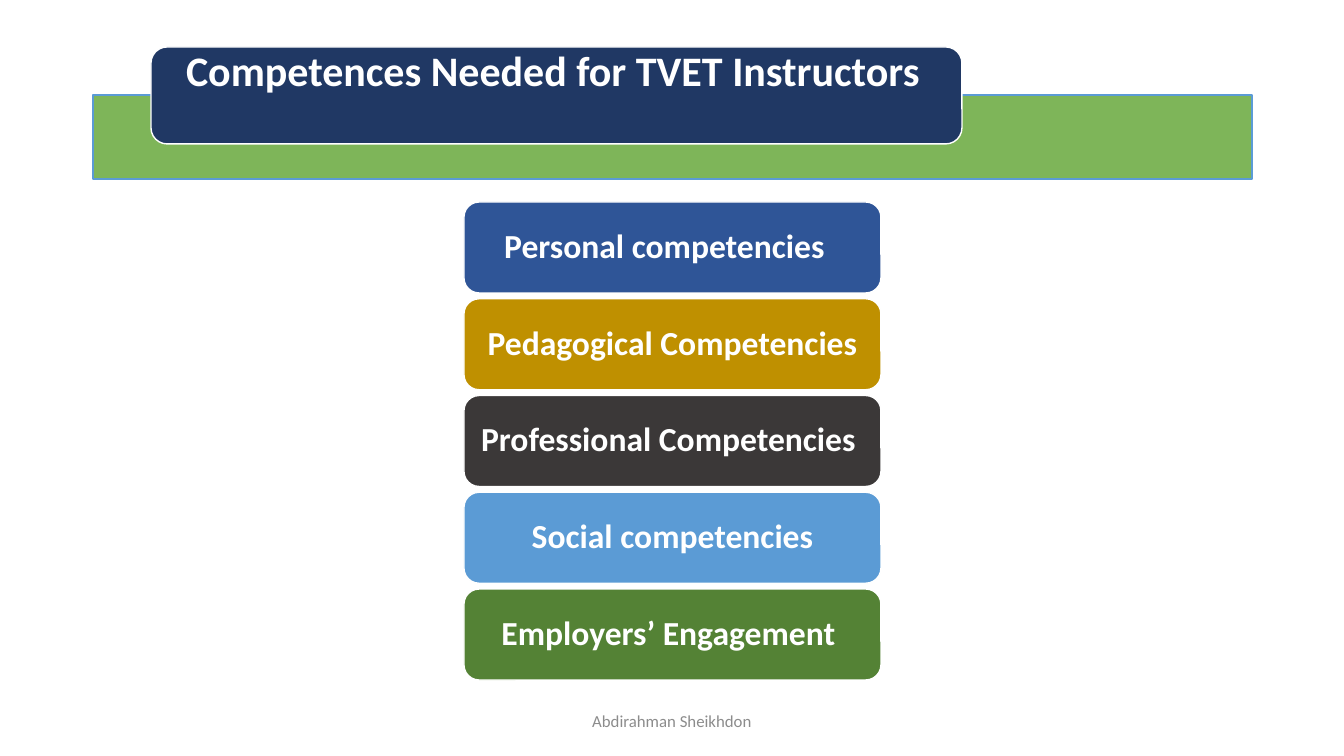
from lxml import etree
from pptx import Presentation
from pptx import util as u
from pptx.dml.color import RGBColor
from pptx.enum import shapes, text
from pptx.oxml import ns

SCALE = 914400 / 100.8  # EMU in one px
WHITE = RGBColor(0xFF, 0xFF, 0xFF)
GREEN = RGBColor(0x70, 0xAD, 0x47)
NAVY = RGBColor(0x20, 0x38, 0x64)
BLUE = RGBColor(0x2F, 0x55, 0x97)
GOLD = RGBColor(0xBF, 0x90, 0x00)
DARK = RGBColor(0x3B, 0x38, 0x38)
SKY = RGBColor(0x5B, 0x9B, 0xD5)
LEAF = RGBColor(0x54, 0x82, 0x35)
GREY = RGBColor(0x8C, 0x8C, 0x8C)

# Label, fill, px by which the label sits left of centre
BARS = [
    ("Personal competencies", BLUE, 8),
    ("Pedagogical Competencies", GOLD, 0),
    ("Professional Competencies", DARK, 4),
    ("Social competencies", SKY, 0),
    ("Employers’ Engagement", LEAF, 4),
]


def px(num):
    return u.Emu(round(num * SCALE))


def draw(slide, kind, box, fill, edge):
    item = slide.shapes.add_shape(kind, *map(px, box))
    item.shadow.inherit = False
    item.fill.solid()
    item.fill.fore_color.rgb = fill
    item.line.color.rgb = edge
    item.line.width = u.Pt(1)
    return item


def write(item, words, size, color, bold=True, align=text.PP_ALIGN.CENTER,
          anchor=text.MSO_ANCHOR.MIDDLE, left=0, right=0, lead=0.9):
    frame = item.text_frame
    frame.word_wrap = True
    frame.auto_size = text.MSO_AUTO_SIZE.NONE
    frame.vertical_anchor = anchor
    frame.margin_left, frame.margin_right = px(left), px(right)
    frame.margin_top = frame.margin_bottom = 0
    para = frame.paragraphs[0]
    para.alignment = align
    para.line_spacing = lead
    para.space_before = u.Pt(0)
    run = para.add_run()
    run.text = words
    font = run.font
    font.name, font.size, font.bold = "Calibri", u.Pt(size), bold
    font.color.rgb = color


def header(slide, x, y, w, h):
    # Translucent band
    band = draw(slide, shapes.MSO_SHAPE.RECTANGLE, (x, y + 48, w, h - 48), GREEN, SKY)
    tint = band.element.spPr.find(ns.qn("a:solidFill"))[0]
    etree.SubElement(tint, ns.qn("a:alpha"), val="90000")
    # Title plate
    draw(slide, shapes.MSO_SHAPE.ROUNDED_RECTANGLE, (x + 58, y, 811, 97), NAVY, WHITE)
    # Title, brought in front of its plate
    title = slide.shapes.title
    title.left, title.top, title.width, title.height = map(px, (x + 63, y + 3, 802, 90))
    write(title, "Competences Needed for TVET Instructors", 30, WHITE,
          align=text.PP_ALIGN.LEFT, anchor=text.MSO_ANCHOR.TOP, left=30, right=30)
    title.element.getparent().append(title.element)


def stack(slide, x, y, w, h):
    tall = 91
    step = (h - tall) / (len(BARS) - 1)
    for row, (label, fill, shift) in enumerate(BARS):
        bar = draw(slide, shapes.MSO_SHAPE.ROUNDED_RECTANGLE,
                   (x, y + row * step, w, tall), fill, WHITE)
        write(bar, label, 24, WHITE, right=2 * shift)


def footer(slide, x, y, w, h):
    note = slide.shapes.add_textbox(*map(px, (x, y, w, h)))
    write(note, "Abdirahman Sheikhdon", 12, GREY, bold=False, lead=1.0)


def main():
    deck = Presentation()
    deck.slide_width, deck.slide_height = px(1344), px(756)
    slide = deck.slides.add_slide(deck.slide_layouts[5])
    header(slide, 93, 47, 1159, 132)
    stack(slide, 464, 202, 417, 478)
    footer(slide, 445, 701, 454, 40)
    deck.save("out.pptx")


if __name__ == "__main__":
    main()
